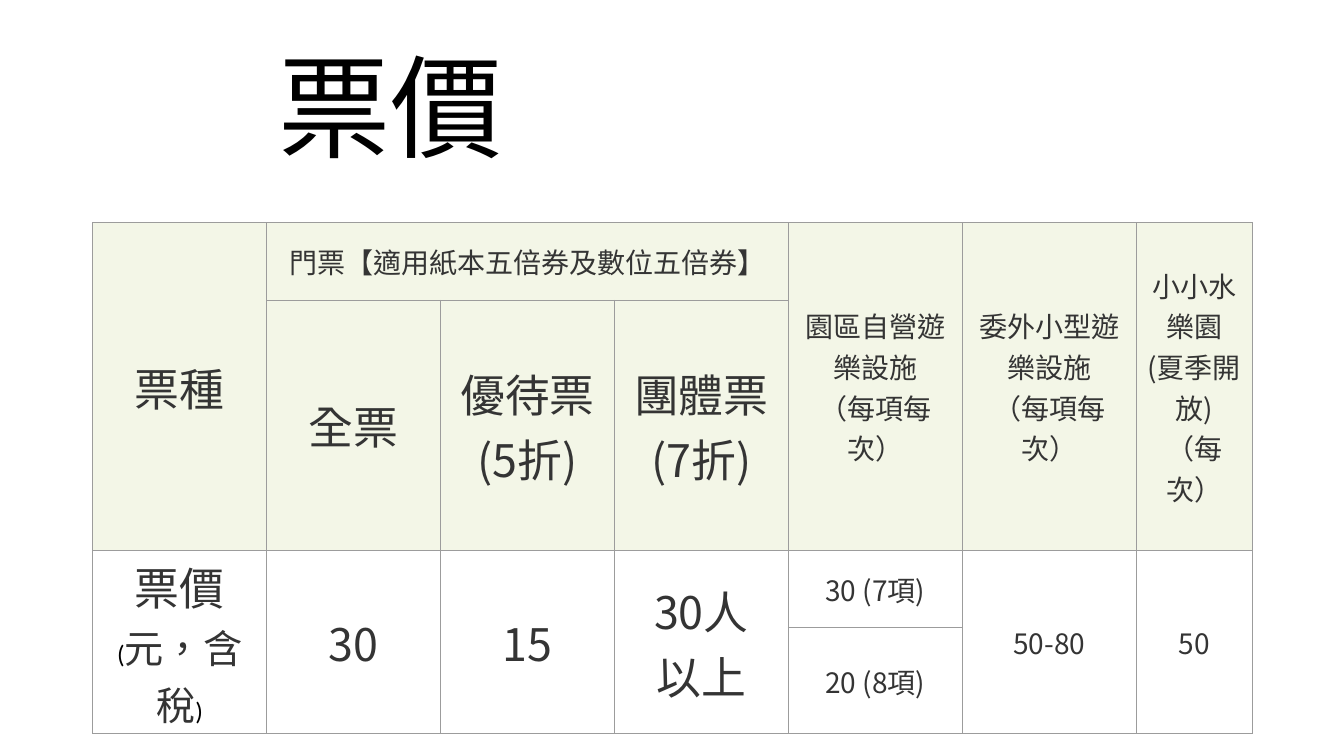
from dataclasses import dataclass

from lxml.etree import SubElement
from pptx import Presentation
from pptx.dml.color import RGBColor
from pptx.enum.lang import MSO_LANGUAGE_ID as LANG
from pptx.enum.text import MSO_ANCHOR, PP_ALIGN
from pptx.oxml.ns import qn
from pptx.util import Inches, Pt


@dataclass(frozen=True)
class Theme:
    font: str = "Noto Sans CJK JP"
    bracket_font: str = "Calibri"
    black: str = "000000"
    ink: str = "343434"
    header: str = "F3F6E7"
    body: str = "FFFFFF"
    border: str = "9C9C9C"
    title: int = 80
    large: int = 32
    unit: int = 28
    small: int = 20
    bracket: int = 18


T = Theme()
TABLE_WIDTH = 11.5
COLUMN_SHARES = [0.15] * 6 + [0.1]
ROWS = [0.77, 2.48, 0.77, 1.05]
HEADER_ROWS = 2

# row, column, rows spanned, columns spanned, text, size
CELLS = [
    (0, 0, 2, 1, "票種", T.large),
    (0, 1, 1, 3, "門票【適用紙本五倍券及數位五倍券】", T.small),
    (0, 4, 2, 1, "園區自營遊樂設施\v（每項每次）", T.small),
    (0, 5, 2, 1, "委外小型遊樂設施\v（每項每次）", T.small),
    (0, 6, 2, 1, "小小水樂園\v(夏季開放)\v（每次）", T.small),
    (1, 1, 1, 1, "全票", T.large),
    (1, 2, 1, 1, "優待票\v(5折)", T.large),
    (1, 3, 1, 1, "團體票\v(7折)", T.large),
    (2, 0, 2, 1, "票價\v", T.large),
    (2, 1, 2, 1, "30", T.large),
    (2, 2, 2, 1, "15", T.large),
    (2, 3, 2, 1, "30人\v以上", T.large),
    (2, 4, 1, 1, "30 (7項)", T.small),
    (2, 5, 2, 1, "50-80", T.small),
    (2, 6, 2, 1, "50", T.small),
    (3, 4, 1, 1, "20 (8項)", T.small),
]


def style_run(r, size, color=T.ink, font=T.font):
    r.font.size = Pt(size)
    r.font.color.rgb = RGBColor.from_string(color)
    r.font.name = font
    r.font.language_id = LANG.TRADITIONAL_CHINESE
    SubElement(r.font._element, qn("a:ea"), typeface=font)


def add_title(s, text):
    tb = s.shapes.add_textbox(Inches(0.92), Inches(0.4), Inches(11.5), Inches(1.45))
    tf = tb.text_frame
    tf.word_wrap = True
    tf.vertical_anchor = MSO_ANCHOR.MIDDLE
    tf.margin_left = Inches(1.84)
    p = tf.paragraphs[0]
    p.text = text
    p.line_spacing = 0.9
    style_run(p.runs[0], T.title, T.black)


def set_borders(cell):
    tcPr = cell._tc.get_or_add_tcPr()
    for side in ("lnL", "lnR", "lnT", "lnB"):
        ln = SubElement(tcPr, qn(f"a:{side}"), w=str(Pt(0.75)))
        fill = SubElement(ln, qn("a:solidFill"))
        SubElement(fill, qn("a:srgbClr"), val=T.border)


def set_cell_text(cell, text, size):
    p = cell.text_frame.paragraphs[0]
    p.text = text
    p.alignment = PP_ALIGN.CENTER
    for r in p.runs:
        style_run(r, size)


def add_unit(cell):
    """Append the bracketed price unit to the cell's text."""
    p = cell.text_frame.paragraphs[0]
    for text, *style in (
        ("(", T.bracket, T.black, T.bracket_font),
        ("元，含稅", T.unit),
        (")", T.bracket, T.black, T.bracket_font),
    ):
        r = p.add_run()
        r.text = text
        style_run(r, *style)


def add_price_table(s):
    frame = s.shapes.add_table(len(ROWS), len(COLUMN_SHARES), Inches(0.92), Inches(2.21),
                               Inches(TABLE_WIDTH), Inches(sum(ROWS)))
    table = frame.table
    for column, share in zip(table.columns, COLUMN_SHARES):
        column.width = Inches(TABLE_WIDTH * share)
    for i, (row, height) in enumerate(zip(table.rows, ROWS)):
        row.height = Inches(height)
        for cell in row.cells:
            set_borders(cell)
            cell.fill.solid()
            color = T.header if i < HEADER_ROWS else T.body
            cell.fill.fore_color.rgb = RGBColor.from_string(color)
            cell.vertical_anchor = MSO_ANCHOR.MIDDLE
            cell.margin_left = cell.margin_right = Inches(0.03)
            cell.margin_top = cell.margin_bottom = Inches(0.03)
    for row, col, row_span, col_span, text, size in CELLS:
        cell = table.cell(row, col)
        if row_span * col_span > 1:
            cell.merge(table.cell(row + row_span - 1, col + col_span - 1))
        set_cell_text(cell, text, size)
    add_unit(table.cell(HEADER_ROWS, 0))


def main():
    prs = Presentation()
    prs.slide_width, prs.slide_height = Inches(13.33), Inches(7.5)
    s = prs.slides.add_slide(prs.slide_layouts[6])
    add_title(s, "票價")
    add_price_table(s)
    prs.save("out.pptx")


if __name__ == "__main__":
    main()
